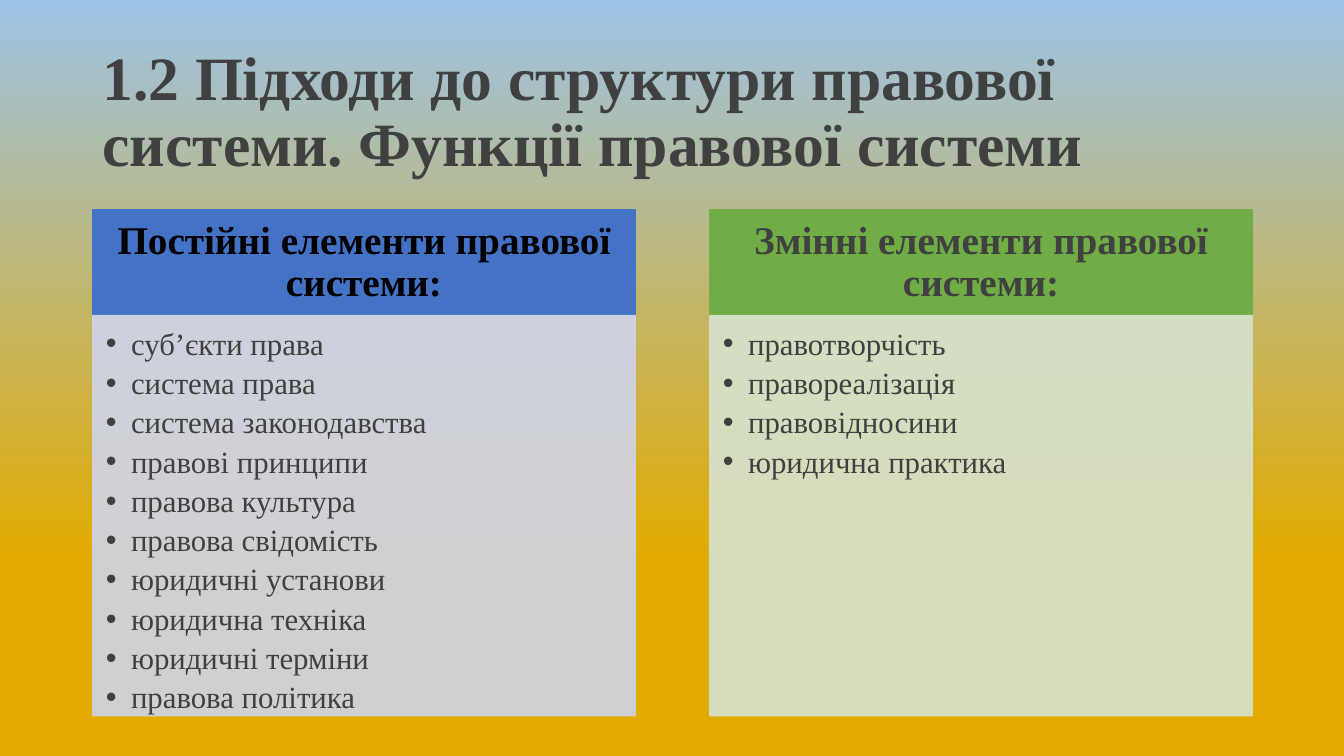
from lxml.etree import SubElement
from pptx import Presentation
from pptx.dml.color import RGBColor
from pptx.enum.shapes import MSO_SHAPE
from pptx.enum.text import MSO_ANCHOR, PP_ALIGN
from pptx.oxml.ns import qn
from pptx.util import Inches, Pt

FONT = "Times New Roman"
DARK = "404040"
HEADER_HEIGHT = 1.05
COLUMN_TOP, COLUMN_WIDTH, COLUMN_HEIGHT = 2.08, 5.38, 5.02
COLUMN_LEFT, COLUMN_STEP = 0.92, 6.12

TITLE = "1.2 Підходи до структури правової системи. Функції правової системи"
COLUMNS = [
    ("Постійні елементи правової системи:", "000000", "4472C4", "CFD5EA",
     ["суб’єкти права", "система права", "система законодавства",
      "правові принципи", "правова культура", "правова свідомість",
      "юридичні установи", "юридична техніка", "юридичні терміни",
      "правова політика"]),
    ("Змінні елементи правової системи:", DARK, "70AD47", "D5E3CF",
     ["правотворчість", "правореалізація", "правовідносини",
      "юридична практика"]),
]


def color(hex_value):
    return RGBColor.from_string(hex_value)


def set_frame(frame, insets, anchor):
    frame.word_wrap = True
    frame.vertical_anchor = anchor
    (frame.margin_left, frame.margin_top,
     frame.margin_right, frame.margin_bottom) = map(Inches, insets)


def write(paragraph, text, size, hex_value, bold=False, align=PP_ALIGN.LEFT):
    paragraph.alignment = align
    paragraph.line_spacing = 0.9
    run = paragraph.add_run()
    run.text = text
    run.font.name = FONT
    run.font.size = Pt(size)
    run.font.bold = bold
    run.font.color.rgb = color(hex_value)


def add_bullet(paragraph):
    properties = paragraph._p.get_or_add_pPr()
    properties.set("marL", str(Inches(0.25)))
    properties.set("indent", str(-Inches(0.25)))
    SubElement(properties, qn("a:buFont"), typeface="Arial")
    SubElement(properties, qn("a:buChar"), char="•")


def add_panel(slide, box, hex_value, opacity=100):
    panel = slide.shapes.add_shape(MSO_SHAPE.RECTANGLE, *map(Inches, box))
    panel.shadow.inherit = False
    panel.fill.solid()
    panel.fill.fore_color.rgb = color(hex_value)
    panel.line.color.rgb = color(hex_value)
    panel.line.width = Pt(1)
    if opacity < 100:
        for shade in panel._element.spPr.iter(qn("a:srgbClr")):
            SubElement(shade, qn("a:alpha"), val=str(opacity * 1000))
    return panel


def paint_background(slide):
    fill = slide.background.fill
    fill.gradient()
    fill.gradient_angle = 90
    for stop, position, shade in zip(fill.gradient_stops, (0.26, 1),
                                     ("E3AB00", "9DC3E6")):
        stop.position = position
        stop.color.rgb = color(shade)


def add_title(slide, box):
    title = slide.shapes.add_textbox(*map(Inches, box))
    set_frame(title.text_frame, (0.1, 0.05, 0.1, 0.05), MSO_ANCHOR.MIDDLE)
    write(title.text_frame.paragraphs[0], TITLE, 44, DARK, bold=True)


def add_column(slide, box, heading, heading_color, header_fill, body_fill, elements):
    left, top, width, height = box

    # Heading band
    header = add_panel(slide, (left, top, width, HEADER_HEIGHT), header_fill)
    set_frame(header.text_frame, (0.22, 0.12, 0.22, 0.12), MSO_ANCHOR.MIDDLE)
    write(header.text_frame.paragraphs[0], heading, 28, heading_color,
          bold=True, align=PP_ALIGN.CENTER)

    # Bulleted list
    body = add_panel(slide, (left, top + HEADER_HEIGHT, width,
                             height - HEADER_HEIGHT), body_fill, opacity=90)
    frame = body.text_frame
    set_frame(frame, (0.13, 0.13, 0.17, 0.19), MSO_ANCHOR.TOP)
    for index, element in enumerate(elements):
        paragraph = frame.add_paragraph() if index else frame.paragraphs[0]
        write(paragraph, element, 22, DARK)
        paragraph.space_after = Pt(4.3)
        add_bullet(paragraph)


def main():
    deck = Presentation()
    deck.slide_width, deck.slide_height = Inches(13.33), Inches(7.5)
    slide = deck.slides.add_slide(deck.slide_layouts[6])
    paint_background(slide)
    add_title(slide, (0.92, 0.4, 11.5, 1.45))
    for index, column in enumerate(COLUMNS):
        left = COLUMN_LEFT + index * COLUMN_STEP
        add_column(slide, (left, COLUMN_TOP, COLUMN_WIDTH, COLUMN_HEIGHT), *column)
    deck.save("out.pptx")


if __name__ == "__main__":
    main()
